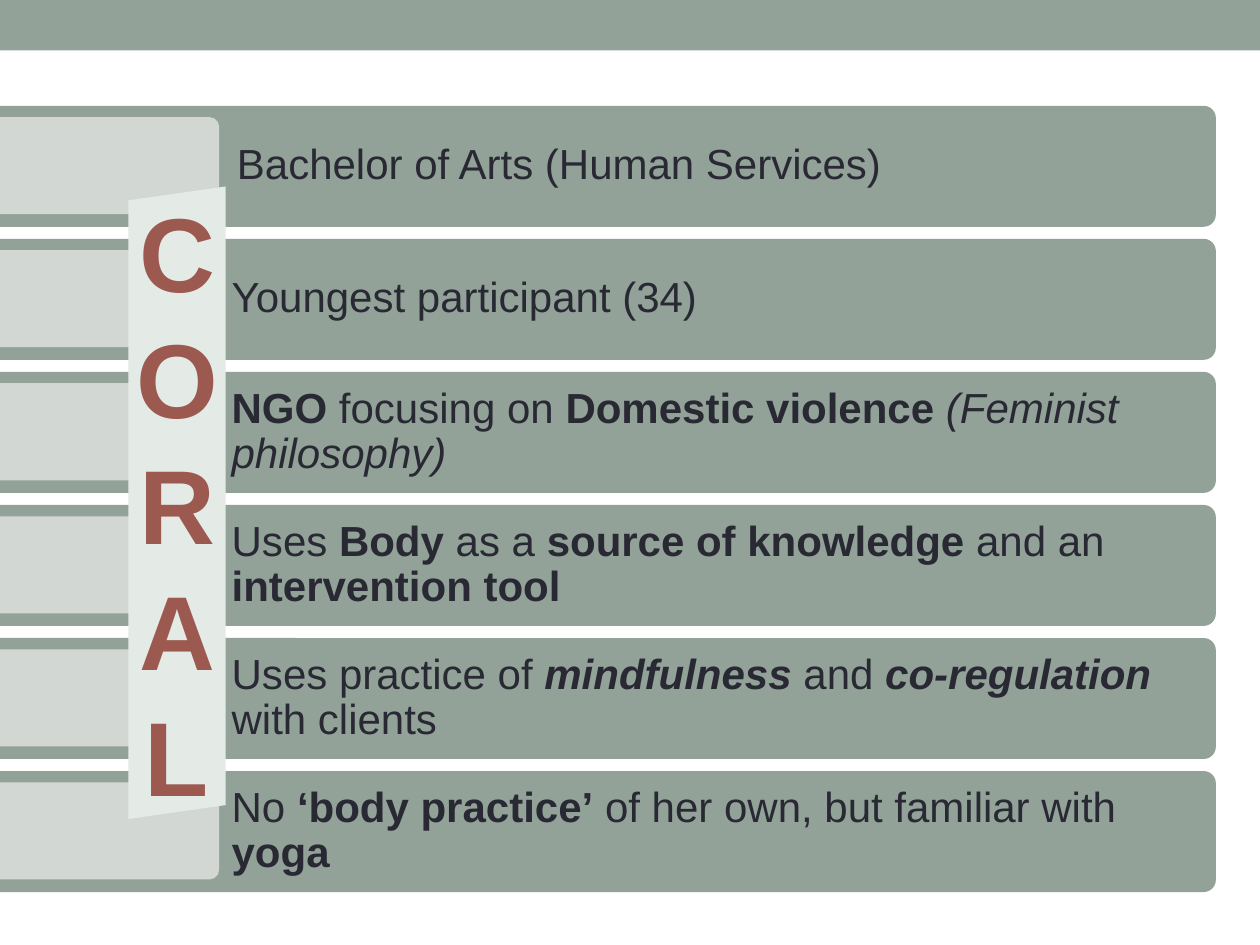
from pptx import Presentation
from pptx.dml.color import RGBColor
from pptx.enum import shapes, text
from pptx.util import Inches, Pt

SAGE, PALE, MIST = "93A299", "D2D7D4", "E4EAE6"
INK, RUST = "292934", "9C5950"

FACTS = [
    [("Bachelor of Arts (Human Services)", "")],
    [("Youngest participant (34)", "")],
    [("NGO", "b"), (" focusing on ", ""), ("Domestic violence ", "b"),
     ("(Feminist philosophy)", "i")],
    [("Uses ", ""), ("Body", "b"), (" as a ", ""), ("source of knowledge ", "b"),
     ("and an ", ""), ("intervention tool", "b")],
    [("Uses practice of ", ""), ("mindfulness", "bi"), (" and ", ""),
     ("co-regulation ", "bi"), ("with clients", "")],
    [("No ", ""), ("‘body practice’", "b"), (" of her own, but familiar with ", ""),
     ("yoga", "b")],
]


def rgb(color):
    return RGBColor.from_string(color)


def paint(shape, color):
    shape.shadow.inherit = False
    shape.fill.solid()
    shape.fill.fore_color.rgb = rgb(color)
    shape.line.fill.background()


def add_block(slide, kind, left, top, width, height, color):
    block = slide.shapes.add_shape(
        kind, Inches(left), Inches(top), Inches(width), Inches(height))
    paint(block, color)
    if kind == shapes.MSO_SHAPE.ROUNDED_RECTANGLE:
        block.adjustments[0] = 0.1
    return block


def write(shape, paragraphs, size=24, color=INK, align=text.PP_ALIGN.LEFT,
          spacing=0.9, inset=0.1, left_inset=None, wrap=True):
    """Fill a shape with paragraphs, each a list of (wording, "b"/"i" flags)."""
    frame = shape.text_frame
    frame.word_wrap = wrap
    frame.vertical_anchor = text.MSO_ANCHOR.MIDDLE
    frame.margin_top = frame.margin_bottom = frame.margin_right = Inches(inset)
    frame.margin_left = Inches(inset if left_inset is None else left_inset)
    for i, runs in enumerate(paragraphs):
        paragraph = frame.add_paragraph() if i else frame.paragraphs[0]
        paragraph.alignment = align
        paragraph.line_spacing = spacing
        for wording, flags in runs:
            run = paragraph.add_run()
            run.text = wording
            run.font.name = "Arial"
            run.font.size = Pt(size)
            run.font.color.rgb = rgb(color)
            run.font.bold = "b" in flags
            run.font.italic = "i" in flags


def add_fact(slide, left, top, width, height, runs, left_inset):
    rounded = shapes.MSO_SHAPE.ROUNDED_RECTANGLE
    gap, tab_width = 0.09, 2
    add_block(slide, rounded, left, top, width, height, SAGE)
    add_block(slide, rounded, left + gap, top + gap, tab_width, 0.77, PALE)
    fact_left = gap + tab_width
    fact = slide.shapes.add_textbox(
        Inches(left + fact_left), Inches(top),
        Inches(width - fact_left), Inches(height))
    write(fact, [runs], left_inset=left_inset)


def add_facts(slide, left, top, width, height):
    row_height = 0.96
    pitch = (height - row_height) / (len(FACTS) - 1)
    for i, runs in enumerate(FACTS):
        add_fact(slide, left, top + i * pitch, width, row_height, runs,
                 left_inset=0.1 if i else 0.14)


def add_name_banner(slide, left, top, width, height, name):
    """Vertical name on a strip whose top and bottom edges rise to the right."""
    rise = 0.11
    corners = [(left + width, top), (left + width, top + height - rise),
               (left, top + height)]
    builder = slide.shapes.build_freeform(Inches(left), Inches(top + rise))
    builder.add_line_segments([(Inches(x), Inches(y)) for x, y in corners])
    banner = builder.convert_to_shape()
    paint(banner, MIST)
    write(banner, [[(letter, "b")] for letter in name], size=60, color=RUST,
          align=text.PP_ALIGN.CENTER, spacing=Pt(72), inset=0, wrap=False)


def main():
    deck = Presentation()
    deck.slide_width, deck.slide_height = Inches(10), Inches(7.5)
    slide = deck.slides.add_slide(deck.slide_layouts[6])
    add_block(slide, shapes.MSO_SHAPE.RECTANGLE, 0, 0, 10, 0.4, SAGE)
    add_facts(slide, -0.35, 0.84, 10, 6.24)
    add_name_banner(slide, 1.02, 1.48, 0.77, 5.02, "CORAL")
    deck.save("out.pptx")


if __name__ == "__main__":
    main()
